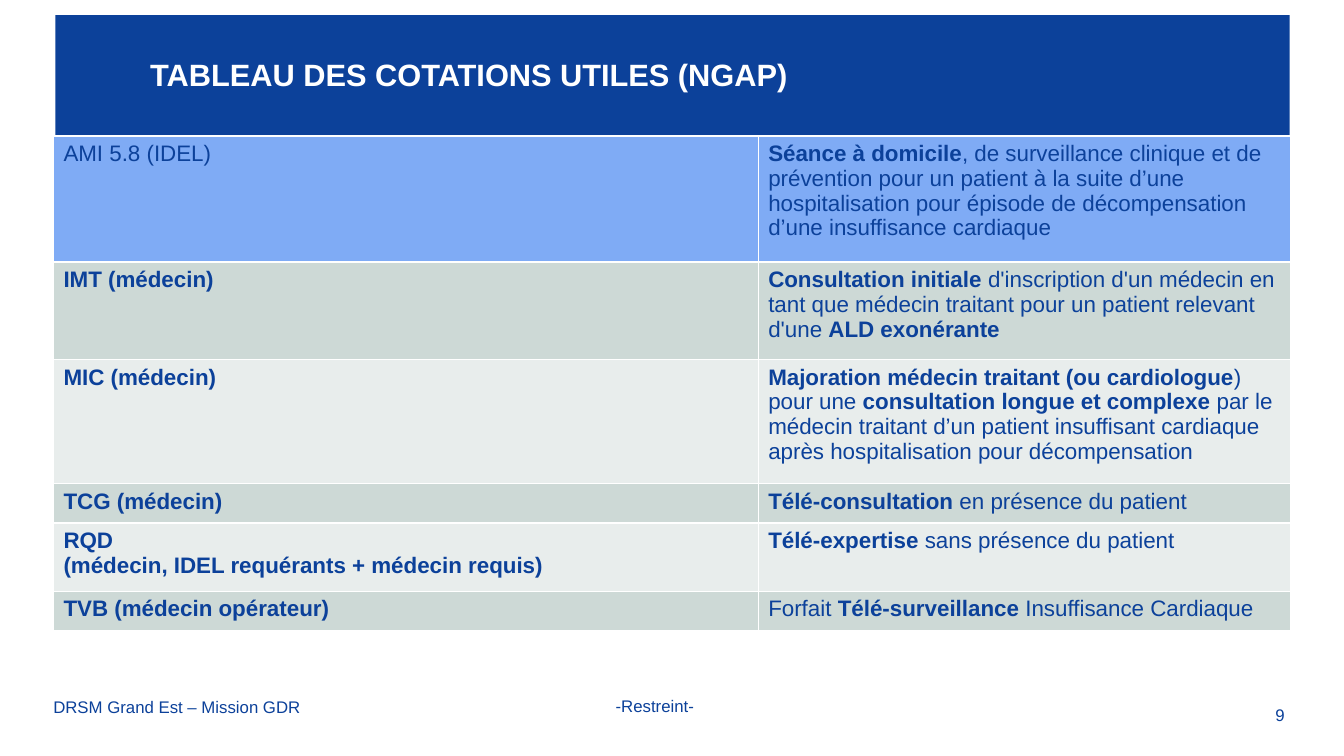
from typing import NamedTuple

from lxml.etree import SubElement
from pptx import Presentation
from pptx.dml.color import RGBColor
from pptx.enum.text import MSO_ANCHOR as Anchor, MSO_AUTO_SIZE as Fit, PP_ALIGN as Align
from pptx.oxml.ns import qn
from pptx.util import Inches, Pt

BLUE, WHITE = "0C419A", "FFFFFF"
SKY, GREY, PALE = "7FABF5", "CDD9D6", "E8EDEC"


class Row(NamedTuple):
    height: float
    fill: str
    code: str
    use: str


class Note(NamedTuple):
    text: str
    box: tuple
    align: Align


# Asterisks enclose bold text
ROWS = [
    Row(1.25, SKY, "AMI 5.8 (IDEL)",
        "*Séance à domicile*, de surveillance clinique et de prévention pour un patient "
        "à la suite d’une\vhospitalisation pour épisode de décompensation "
        "d’une insuffisance cardiaque"),
    Row(0.97, GREY, "*IMT (médecin)*",
        "*Consultation initiale *d'inscription d'un médecin en tant que médecin traitant "
        "pour un patient relevant\vd'une *ALD exonérante*"),
    Row(1.23, PALE, "*MIC (médecin)*",
        "*Majoration médecin traitant (ou cardiologue*) pour une "
        "*consultation longue et complexe *par le médecin traitant d’un patient "
        "insuffisant cardiaque après hospitalisation pour décompensation"),
    Row(0.39, GREY, "*TCG (médecin)*", "*Télé-consultation* en présence du patient"),
    Row(0.68, PALE, "*RQD*\n*(médecin, IDEL requérants + médecin requis)*",
        "*Télé-expertise* sans présence du patient"),
    Row(0.39, GREY, "*TVB (médecin opérateur)*",
        "Forfait *Télé-surveillance* Insuffisance Cardiaque"),
]
COLS = (6.99, 5.28)
NOTES = [
    Note("-Restreint-", (5.7, 6.85, 1.59, 0.31), Align.CENTER),
    Note("9", (12.55, 6.94, 0.41, 0.31), Align.LEFT),
    Note("DRSM Grand Est – Mission GDR", (0.43, 6.86, 3.59, 0.31), Align.LEFT),
]


def tint(part, color: str) -> None:
    part.rgb = RGBColor.from_string(color)


def paint(shape, color: str) -> None:
    shape.fill.solid()
    tint(shape.fill.fore_color, color)


def style(font, size: float, color: str = BLUE, bold: bool = False) -> None:
    for name, value in {"name": "Arial", "size": Pt(size), "bold": bold}.items():
        setattr(font, name, value)
    tint(font.color, color)


def write(frame, text: str, size: float) -> None:
    for i, line in enumerate(text.split("\n")):
        para = frame.paragraphs[0] if i == 0 else frame.add_paragraph()
        for j, piece in enumerate(line.split("*")):
            for k, part in enumerate(piece.split("\v")):
                if k:
                    para.add_line_break()
                if part:
                    run = para.add_run()
                    run.text = part
                    style(run.font, size, bold=j % 2 == 1)


def border(cell, base: float) -> None:
    props = cell._tc.get_or_add_tcPr()
    widths = {"lnL": 1, "lnR": 1, "lnT": 1, "lnB": base}
    for i, (side, width) in enumerate(widths.items()):
        line = SubElement(props, qn(f"a:{side}"), w=str(Pt(width)))
        fill = SubElement(line, qn("a:solidFill"))
        SubElement(fill, qn("a:srgbClr"), val=WHITE)
        props.insert(i, line)


def add_title(slide) -> None:
    title = slide.shapes.title
    place = zip(("left", "top", "width", "height"), (0.55, 0.15, 12.24, 1.22))
    for name, value in place:
        setattr(title, name, Inches(value))
    paint(title, BLUE)
    frame = title.text_frame
    pads = {"margin_left": 0.94, "margin_top": 0.08, "margin_right": 0.08, "margin_bottom": 0.08}
    for name, value in pads.items():
        setattr(frame, name, Inches(value))
    frame.auto_size, frame.vertical_anchor = Fit.NONE, Anchor.MIDDLE
    frame.text = "TABLEAU DES COTATIONS UTILES (NGAP)"
    para = frame.paragraphs[0]
    para.alignment, para.line_spacing = Align.LEFT, 0.9
    style(para.runs[0].font, 22, WHITE, True)


def add_grid(slide) -> None:
    size = sum(COLS), sum(row.height for row in ROWS)
    grid = slide.shapes.add_table(
        len(ROWS), len(COLS), *map(Inches, (0.53, 1.35, *size))).table
    grid.first_row = grid.horz_banding = False
    for col, width in zip(grid.columns, COLS):
        col.width = Inches(width)
    for i, row in enumerate(ROWS):
        grid.rows[i].height = Inches(row.height)
        for cell, text in zip(grid.rows[i].cells, (row.code, row.use)):
            paint(cell, row.fill)
            border(cell, 1)
            write(cell.text_frame, text, 16)


def add_note(slide, note: Note) -> None:
    frame = slide.shapes.add_textbox(*map(Inches, note.box)).text_frame
    frame.word_wrap, frame.vertical_anchor = True, Anchor.MIDDLE
    write(frame, note.text, 12)
    frame.paragraphs[0].alignment = note.align


def main() -> None:
    prs = Presentation()
    prs.slide_width, prs.slide_height = Inches(13.33), Inches(7.5)
    slide = prs.slides.add_slide(prs.slide_layouts.get_by_name("Title Only"))
    # Heading, table of codes, footer
    add_title(slide)
    add_grid(slide)
    for note in NOTES:
        add_note(slide, note)
    prs.save("out.pptx")


if __name__ == "__main__":
    main()
